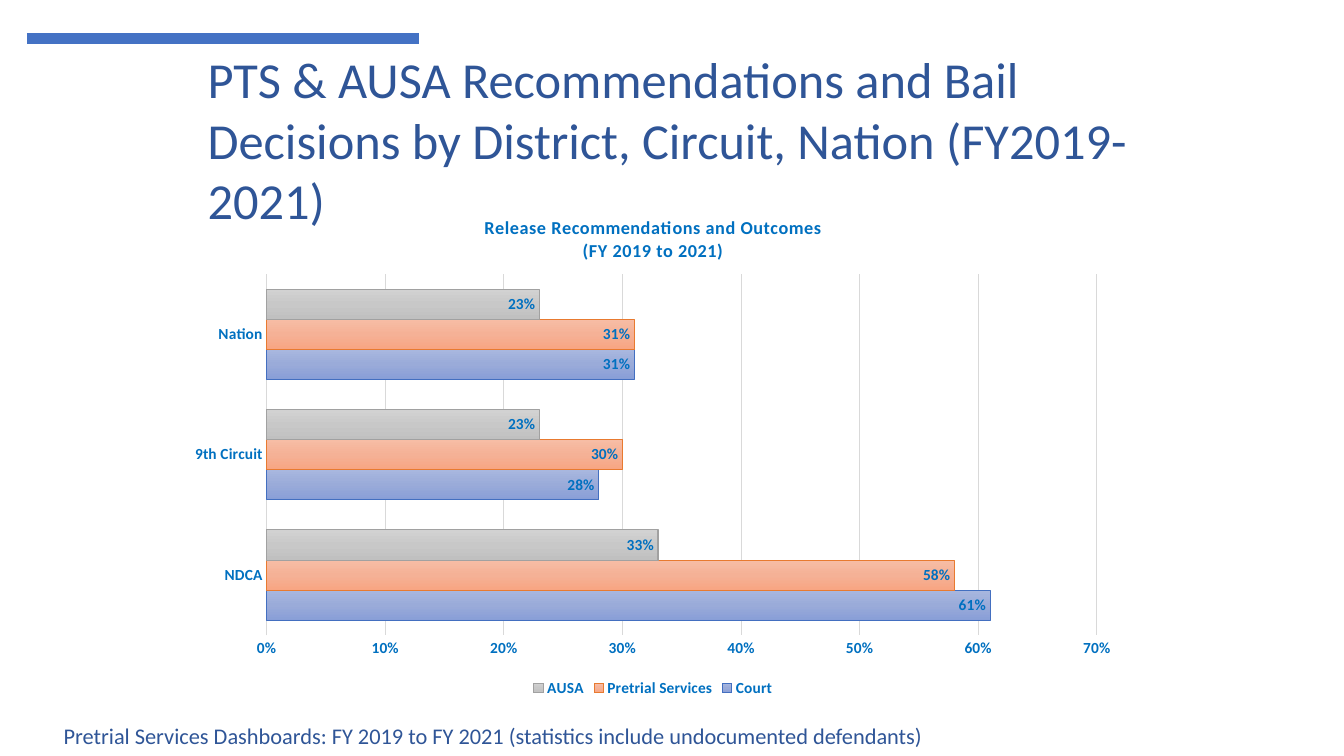
from copy import deepcopy
from dataclasses import dataclass

from lxml import etree
from pptx import Presentation
from pptx.chart.data import CategoryChartData
from pptx.dml.color import RGBColor
from pptx.enum.chart import XL_CHART_TYPE, XL_LABEL_POSITION, XL_LEGEND_POSITION, XL_TICK_MARK
from pptx.enum.shapes import MSO_CONNECTOR
from pptx.enum.text import MSO_ANCHOR, MSO_AUTO_SIZE, PP_ALIGN
from pptx.oxml.ns import qn
from pptx.util import Inches, Pt

BAR_CLUSTERED = XL_CHART_TYPE.BAR_CLUSTERED
INSIDE_END = XL_LABEL_POSITION.INSIDE_END
LEGEND_BOTTOM = XL_LEGEND_POSITION.BOTTOM
NO_TICK = XL_TICK_MARK.NONE
STRAIGHT = MSO_CONNECTOR.STRAIGHT
TOP = MSO_ANCHOR.TOP
FIXED_SIZE = MSO_AUTO_SIZE.NONE
LEFT, CENTER = PP_ALIGN.LEFT, PP_ALIGN.CENTER
TITLE_ONLY = 5
PERCENT = "0%"


@dataclass(frozen=True)
class Theme:
    font: str = "Calibri"
    heading: str = "2F5597"
    accent: str = "4472C4"
    chart_text: str = "0070C0"
    grid: str = "D9D9D9"
    title_size: float = 36
    note_size: float = 16
    chart_title_size: float = 13
    chart_size: float = 11
    hairline: float = 0.75
    accent_width: float = 8


@dataclass(frozen=True)
class BarSeries:
    name: str
    values: tuple
    gradient: tuple
    outline: str


CATEGORIES = ("NDCA", "9th Circuit", "Nation")
SERIES = (
    BarSeries("Court", (0.61, 0.28, 0.31), ("A8B7DF", "9AABD9", "889ED7"), "436FC0"),
    BarSeries("Pretrial Services", (0.58, 0.30, 0.31), ("F7BDA5", "F5B196", "F8A582"), "E87A30"),
    BarSeries("AUSA", (0.33, 0.23, 0.23), ("D2D2D2", "C8C8C8", "C0C0C0"), "A1A1A1"),
)


def style_font(font, name, size, color, bold=False):
    font.name, font.size, font.bold = name, Pt(size), bold
    font.color.rgb = RGBColor.from_string(color)


def style_line(line, color, width):
    line.color.rgb = RGBColor.from_string(color)
    line.width = Pt(width)


def write_text(frame, text, *, font, size, color, bold=False, align=LEFT, spacing=0):
    """Fill a text frame, one paragraph per line; spacing is in hundredths of a point."""
    frame.text = text
    for paragraph in frame.paragraphs:
        paragraph.alignment = align
        for run in paragraph.runs:
            style_font(run.font, font, size, color, bold)
            if spacing:
                run.font._element.set("spc", str(spacing))


def place_in_chart(element, index, **shares):
    """Give a chart part a manual layout in shares of the chart's size."""
    layout = element.find(qn("c:layout"))
    if layout is None:
        layout = etree.Element(qn("c:layout"))
        element.insert(index, layout)
    for child in list(layout):
        layout.remove(child)
    manual = etree.SubElement(layout, qn("c:manualLayout"))
    settings = {"xMode": "edge", "yMode": "edge", **shares}
    if "w" in shares:
        settings = {"layoutTarget": "inner", **settings}
    for tag, value in settings.items():
        etree.SubElement(manual, qn(f"c:{tag}")).set("val", str(value))


def fill_gradient(series, colors):
    """Fill the bars from top to bottom with evenly spaced colours."""
    fill = series.format.fill
    fill.gradient()
    fill.gradient_angle = 270
    stops = series._element.find(".//" + qn("a:gsLst"))
    while len(stops) < len(colors):
        stops.append(deepcopy(stops[-1]))
    for index, (stop, color) in enumerate(zip(fill.gradient_stops, colors)):
        stop.position = index / (len(colors) - 1)
        stop.color.rgb = RGBColor.from_string(color)


class SlideBuilder:
    """Draws on one slide; every box is (left, top, width, height) in shares of it."""

    def __init__(self, presentation, theme):
        self.theme = theme
        self.width, self.height = presentation.slide_width, presentation.slide_height
        self.slide = presentation.slides.add_slide(presentation.slide_layouts[TITLE_ONLY])

    def scale(self, left, top, width, height):
        return (int(left * self.width), int(top * self.height),
                int(width * self.width), int(height * self.height))

    def title(self, text, box):
        shape = self.slide.shapes.title
        shape.left, shape.top, shape.width, shape.height = self.scale(*box)
        frame = shape.text_frame
        frame.word_wrap, frame.auto_size, frame.vertical_anchor = True, FIXED_SIZE, TOP
        write_text(frame, text, font=self.theme.font, size=self.theme.title_size,
                   color=self.theme.heading)

    def note(self, text, box):
        frame = self.slide.shapes.add_textbox(*self.scale(*box)).text_frame
        frame.word_wrap = True
        write_text(frame, text, font=self.theme.font, size=self.theme.note_size,
                   color=self.theme.heading)

    def accent_rule(self, left, top, width):
        x, y, length, _ = self.scale(left, top, width, 0)
        rule = self.slide.shapes.add_connector(STRAIGHT, x, y, x + length, y)
        style_line(rule.line, self.theme.accent, self.theme.accent_width)
        etree.SubElement(rule._element.spPr, qn("a:effectLst"))

    def bar_chart(self, title, categories, bar_series, box):
        theme = self.theme
        data = CategoryChartData(number_format=PERCENT)
        data.categories = categories
        for item in bar_series:
            data.add_series(item.name, item.values)
        chart = self.slide.shapes.add_chart(BAR_CLUSTERED, *self.scale(*box), data).chart
        style_font(chart.font, theme.font, theme.chart_size, theme.chart_text, True)
        write_text(chart.chart_title.text_frame, title, font=theme.font,
                   size=theme.chart_title_size, color=theme.chart_text, bold=True,
                   align=CENTER, spacing=50)
        place_in_chart(chart.chart_title._element, 1, x=0.32, y=0.04)
        place_in_chart(chart._chartSpace.chart.plotArea, 0, x=0.095, y=0.16, w=0.87, h=0.71)
        chart.has_legend = True
        chart.legend.position = LEGEND_BOTTOM
        chart.legend.include_in_layout = False
        self.chart_axes(chart)
        self.chart_bars(chart.plots[0], bar_series)

    def chart_axes(self, chart):
        theme = self.theme
        category, value = chart.category_axis, chart.value_axis
        for axis in (category, value):
            axis.major_tick_mark = axis.minor_tick_mark = NO_TICK
            style_font(axis.tick_labels.font, theme.font, theme.chart_size,
                       theme.chart_text, True)
        style_line(category.format.line, theme.grid, theme.hairline)
        value.format.line.fill.background()
        style_line(value.major_gridlines.format.line, theme.grid, theme.hairline)
        value.minimum_scale, value.maximum_scale, value.major_unit = 0, 0.7, 0.1
        value.tick_labels.number_format = PERCENT
        value.tick_labels.number_format_is_linked = False

    def chart_bars(self, plot, bar_series):
        theme = self.theme
        plot.gap_width, plot.overlap, plot.vary_by_categories = 100, 0, False
        for series, item in zip(plot.series, bar_series):
            fill_gradient(series, item.gradient)
            style_line(series.format.line, item.outline, theme.hairline)
            labels = series.data_labels
            labels.show_value, labels.position = True, INSIDE_END
            labels.number_format, labels.number_format_is_linked = PERCENT, False
            style_font(labels.font, theme.font, theme.chart_size, theme.chart_text, True)


def main():
    presentation = Presentation()
    presentation.slide_width, presentation.slide_height = Inches(13.33), Inches(7.5)
    builder = SlideBuilder(presentation, Theme())
    builder.title("PTS & AUSA Recommendations and Bail Decisions by District, "
                  "Circuit, Nation (FY2019-2021)", (0.147, 0.057, 0.764, 0.175))
    builder.accent_rule(0.02, 0.051, 0.292)
    builder.note("Pretrial Services Dashboards: FY 2019 to FY 2021 "
                 "(statistics include undocumented defendants)", (0.04, 0.949, 0.764, 0.049))
    builder.bar_chart("Release Recommendations and Outcomes\n(FY 2019 to 2021)",
                      CATEGORIES, SERIES, (0.131, 0.255, 0.71, 0.673))
    presentation.save("out.pptx")


if __name__ == "__main__":
    main()
